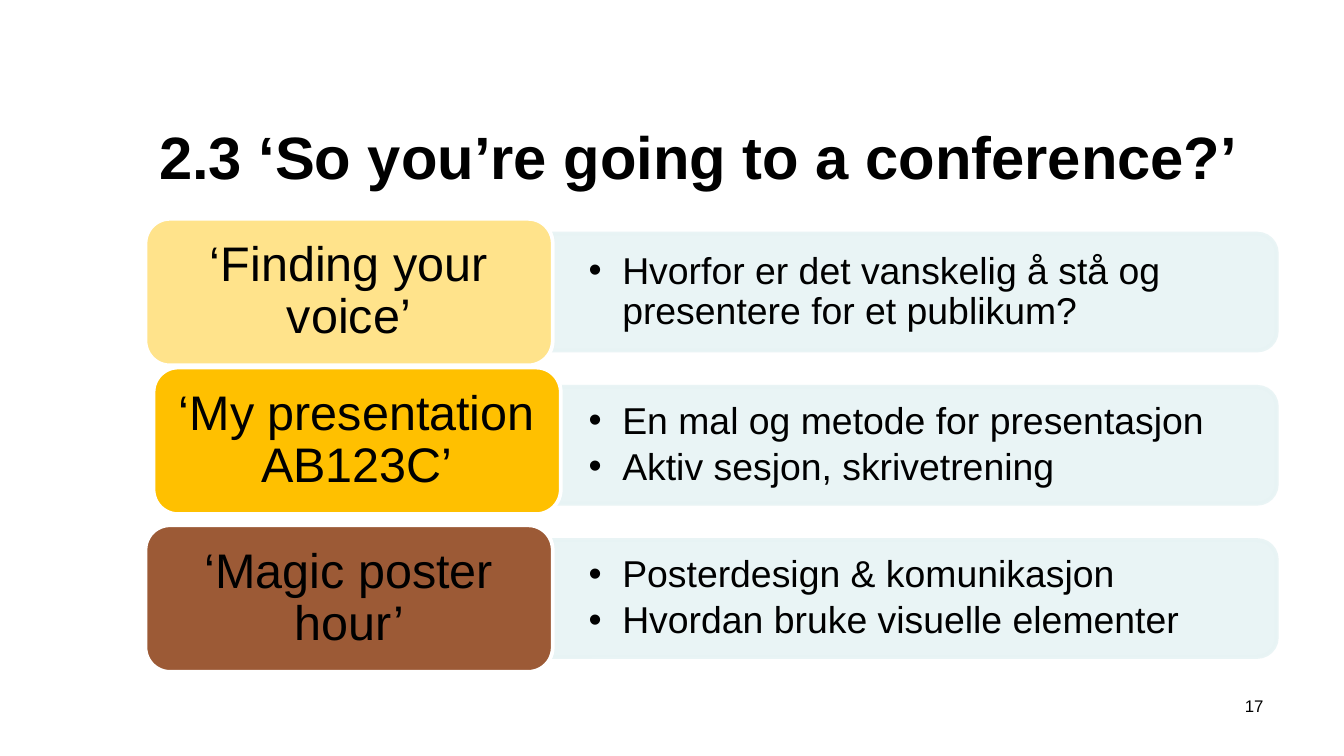
from lxml.etree import SubElement as Sub
from pptx import Presentation
from pptx.dml.color import RGBColor as Rgb
from pptx.enum.shapes import MSO_SHAPE as Kind
from pptx.enum.text import MSO_ANCHOR as Anchor, MSO_AUTO_SIZE as Auto, PP_ALIGN as Align
from pptx.oxml.ns import qn
from pptx.util import Inches, Pt

WIDE = Inches(10)
HIGH = WIDE * 9 // 16
TOP, STEP = 28.95, 20.27
HUES = {"ink": "000000", "edge": "FFFFFF", "bar": "E7F3F4",
        "sand": "FFE38B", "gold": "FFC000", "rust": "9C5A36"}
ROWS = [
    ("‘Finding your voice’", "sand", (0, 0), 2,
     ["Hvorfor er det vanskelig å stå og presentere for et publikum?"]),
    ("‘My presentation AB123C’", "gold", (0.6, -0.6), 4,
     ["En mal og metode for presentasjon", "Aktiv sesjon, skrivetrening"]),
    ("‘Magic poster hour’", "rust", (0, 0), 1,
     ["Posterdesign & komunikasjon", "Hvordan bruke visuelle elementer"]),
]


def hue(name):
    """Return a named colour."""
    return Rgb.from_string(HUES[name])


def area(x, y, w, h):
    """Turn percentages of the slide into a box."""
    return [int(WIDE * x / 100), int(HIGH * y / 100),
            int(WIDE * w / 100), int(HIGH * h / 100)]


def place(shape, box):
    """Move and size a shape."""
    shape.left, shape.top, shape.width, shape.height = box


def write(shape, text, size, align, pad=(0.1, 0.05), bold=False, mid=True):
    """Fill a shape with formatted text."""
    frame = shape.text_frame
    frame.text = text
    frame.word_wrap = True
    frame.auto_size = Auto.NONE
    frame.vertical_anchor = Anchor.MIDDLE if mid else Anchor.TOP
    frame.margin_left = frame.margin_right = Inches(pad[0])
    frame.margin_top = frame.margin_bottom = Inches(pad[1])
    for para in frame.paragraphs:
        para.alignment = align
        para.space_before = Pt(0)
        for run in para.runs:
            font = run.font
            font.name, font.size, font.bold = "Arial", Pt(size), bold
            font.color.rgb = hue("ink")
    return frame


def paint(shape, fill, line):
    """Set the fill and outline of a shape."""
    shape.shadow.inherit = False
    shape.fill.solid()
    shape.fill.fore_color.rgb = hue(fill)
    shape.line.color.rgb = hue(line)
    shape.line.width = Pt(2)


def add_bar(slide, y):
    """Draw a pale bar with its right corners rounded."""
    x, y, w, h = area(41.1, y, 53.9, 15.47)
    bar = slide.shapes.add_shape(
        Kind.ROUND_2_SAME_RECTANGLE, x + (w - h) // 2, y + (h - w) // 2, h, w)
    bar.rotation = 90
    paint(bar, "bar", "bar")
    for tint in bar._element.spPr.iter(qn("a:srgbClr")):
        Sub(tint, qn("a:alpha"), val="90000")


def add_list(slide, slot, y, items):
    """Set a bulleted list in a body placeholder, in front of its bar."""
    body = slide.placeholders[slot]
    place(body, area(41.1, y, 53.4, 14.04))
    slide.shapes._spTree.append(body._element)
    frame = write(body, "\n".join(items), 20, Align.LEFT, (0.27, 0.14))
    for para in frame.paragraphs:
        props = para._p.get_or_add_pPr()
        props.set("marL", str(Inches(0.25)))
        props.set("indent", str(-Inches(0.25)))
        Sub(props, qn("a:buFont"), typeface="Arial")
        Sub(props, qn("a:buChar"), char="•")
        para.line_spacing = 0.9
        para.space_after = Pt(3)


def add_label(slide, x, y, text, fill):
    """Draw a rounded label."""
    label = slide.shapes.add_shape(Kind.ROUNDED_RECTANGLE, *area(x, y, 30.3, 19.38))
    paint(label, fill, "edge")
    frame = write(label, text, 26, Align.CENTER, (0.11, 0.05))
    frame.paragraphs[0].line_spacing = 0.9


def main():
    """Build the slide and save it."""
    deck = Presentation()
    deck.slide_width, deck.slide_height = WIDE, HIGH
    slide = deck.slides.add_slide(deck.slide_layouts[4])
    title = slide.shapes.title
    place(title, area(10.83, 12.27, 84.2, 16.71))
    write(title, "2.3 ‘So you’re going to a conference?’", 32, Align.LEFT, bold=True)
    spare = slide.placeholders[3]._element
    spare.getparent().remove(spare)
    page = slide.shapes.add_textbox(*area(87.5, 91.1, 7.5, 6.76))
    write(page, "17", 9, Align.RIGHT, mid=False)
    for row, (name, fill, (right, down), slot, items) in enumerate(ROWS):
        y = TOP + STEP * row
        add_bar(slide, y + 1.96)
        add_list(slide, slot, y + 2.67, items)
        add_label(slide, 10.83 + right, y + down, name, fill)
    deck.save("out.pptx")


if __name__ == "__main__":
    main()
